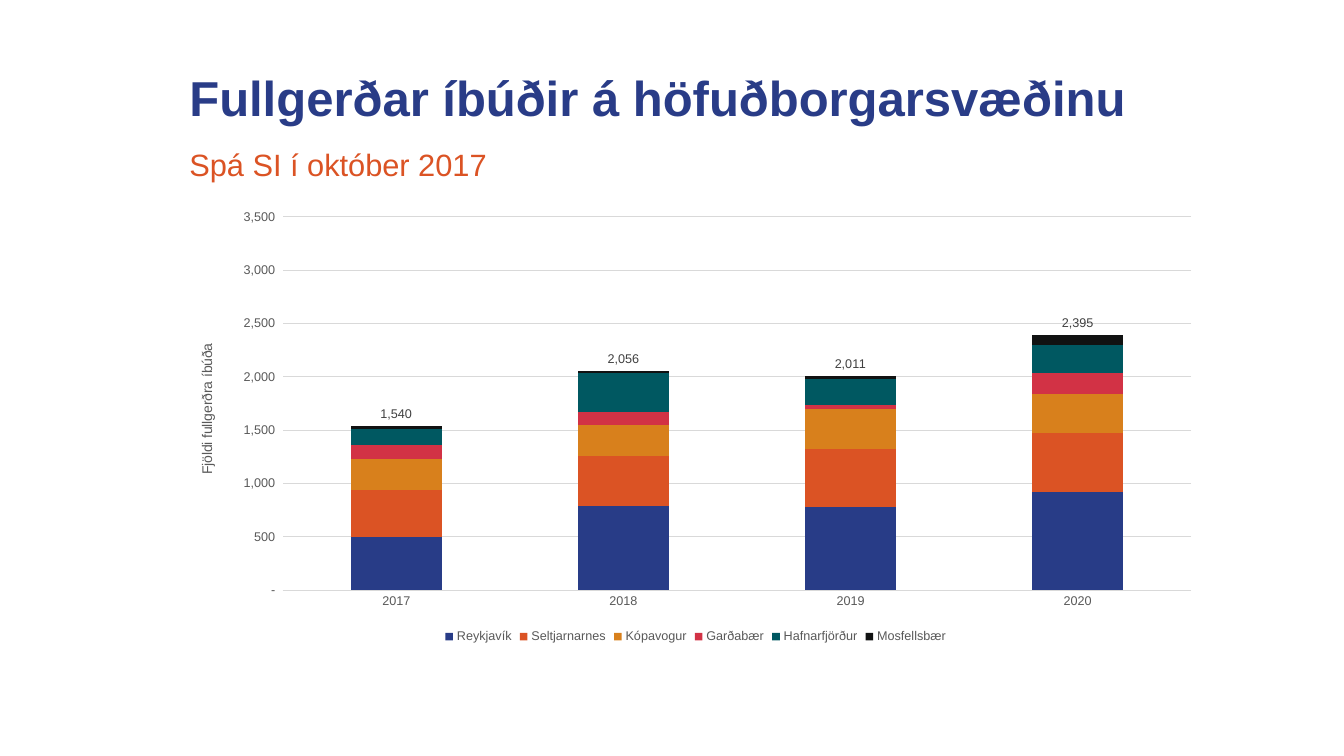
from dataclasses import dataclass

from lxml import etree
from pptx import Presentation
from pptx import util as u
from pptx.chart import data as chart_data
from pptx.dml import color
from pptx.enum import chart as ch
from pptx.enum import text
from pptx.oxml import ns, parse_xml

YEARS = ["2017", "2018", "2019", "2020"]
TOTALS = [1540, 2056, 2011, 2395]
TOWNS = {
    "Reykjavík": ([500, 790, 780, 920], "283C87"),
    "Seltjarnarnes": ([440, 470, 540, 550], "DB5324"),
    "Kópavogur": ([290, 290, 380, 370], "D8801C"),
    "Garðabær": ([130, 120, 40, 200], "D23245"),
    "Hafnarfjörður": ([150, 370, 240, 260], "005861"),
    "Mosfellsbær": ([30, 20, 30, 90], "111212"),
}
PLOT_AREA = {"x": 0.1, "y": 0.03, "w": 0.88, "h": 0.84}


@dataclass(frozen=True)
class Theme:
    """Colours, font and type sizes of the slide."""
    font: str = "Arial"
    heading: str = "293C87"
    accent: str = "DB5324"
    muted: str = "595959"
    label: str = "404040"
    grid: str = "D9D9D9"
    heading_size: int = 35
    subheading_size: int = 22
    axis_title_size: int = 10
    small_size: int = 9


class Deck:
    """Holds the theme and the current slide, and adds elements to it."""

    def __init__(self, theme):
        self.theme = theme
        self.prs = Presentation()
        self.prs.slide_width = u.Inches(13.33)
        self.prs.slide_height = u.Inches(7.5)
        self.slide = self.prs.slides.add_slide(self.prs.slide_layouts[6])

    def style(self, font, size, rgb, bold=False):
        """Apply the theme font with a size and colour."""
        values = {"name": self.theme.font, "size": u.Pt(size), "bold": bold}
        for key, value in values.items():
            setattr(font, key, value)
        font.color.rgb = color.RGBColor.from_string(rgb)

    def line(self, line):
        """Draw a thin grid-coloured line."""
        line.width = u.Pt(0.75)
        line.color.rgb = color.RGBColor.from_string(self.theme.grid)

    def text(self, wording, box, size, rgb, anchor, bold=False):
        """Add one line of text in a box."""
        frame = self.slide.shapes.add_textbox(*map(u.Inches, box)).text_frame
        frame.word_wrap = True
        frame.vertical_anchor = anchor
        paragraph = frame.paragraphs[0]
        paragraph.line_spacing = 0.9
        run = paragraph.add_run()
        run.text = wording
        self.style(run.font, size, rgb, bold)

    def stacked_chart(self, box, axis_title):
        """Add the stacked columns with their totals above."""
        theme = self.theme
        figures = chart_data.CategoryChartData(number_format="#,##0")
        figures.categories = YEARS
        for town, (homes, _) in TOWNS.items():
            figures.add_series(town, homes)
        figures.add_series("Series 7", TOTALS)
        chart = self.slide.shapes.add_chart(
            ch.XL_CHART_TYPE.COLUMN_STACKED, *map(u.Inches, box), figures).chart
        self.style(chart.font, theme.axis_title_size, theme.muted)
        chart.has_title = False
        self.axes(chart, axis_title)
        self.totals_line(chart)
        columns = chart.plots[0]
        for key, value in {"gap_width": 150, "overlap": 100,
                           "vary_by_categories": False}.items():
            setattr(columns, key, value)
        for series, (_, rgb) in zip(columns.series, TOWNS.values()):
            series.format.fill.solid()
            series.format.fill.fore_color.rgb = color.RGBColor.from_string(rgb)
        self.legend(chart)
        self.plot_layout(chart)

    def axes(self, chart, axis_title):
        """Format both axes and the gridlines."""
        theme = self.theme
        for axis in (chart.category_axis, chart.value_axis):
            axis.major_tick_mark = ch.XL_TICK_MARK.NONE
            axis.minor_tick_mark = ch.XL_TICK_MARK.NONE
            self.style(axis.tick_labels.font, theme.small_size, theme.muted)
        self.line(chart.category_axis.format.line)
        homes = chart.value_axis
        for key, value in {"minimum_scale": 0, "maximum_scale": 3500,
                           "major_unit": 500, "has_major_gridlines": True}.items():
            setattr(homes, key, value)
        self.line(homes.major_gridlines.format.line)
        homes.format.line.fill.background()
        homes.tick_labels.number_format = r'_(* #,##0_);_(* \(#,##0\);_(* "-"_);_(@_)'
        homes.tick_labels.number_format_is_linked = False
        title = homes.axis_title.text_frame
        title.text = axis_title
        self.style(title.paragraphs[0].runs[0].font, theme.axis_title_size, theme.muted)

    def totals_line(self, chart):
        """Turn the last series into an unseen line that carries the totals."""
        columns = chart.plots[0]._element
        totals = columns.findall(ns.qn("c:ser"))[-1]
        for flag in totals.findall(ns.qn("c:invertIfNegative")):
            totals.remove(flag)
        line = parse_xml(f'<c:lineChart {ns.nsdecls("c")}>'
                         '<c:grouping val="standard"/><c:varyColors val="0"/>'
                         '<c:marker val="1"/></c:lineChart>')
        line.insert(2, totals)
        for axis_id in columns.findall(ns.qn("c:axId")):
            etree.SubElement(line, ns.qn("c:axId"), val=axis_id.get("val"))
        columns.addnext(line)
        series = chart.plots[1].series[0]
        series.smooth = False
        series.marker.style = ch.XL_MARKER_STYLE.NONE
        series.format.line.fill.background()
        labels = series.data_labels
        for key, value in {"show_value": True, "number_format": "#,##0",
                           "number_format_is_linked": False,
                           "position": ch.XL_LABEL_POSITION.ABOVE}.items():
            setattr(labels, key, value)
        self.style(labels.font, self.theme.small_size, self.theme.label)

    def legend(self, chart):
        """Show the towns below the chart and leave the totals out."""
        chart.has_legend = True
        legend = chart.legend
        legend.position = ch.XL_LEGEND_POSITION.BOTTOM
        legend.include_in_layout = False
        self.style(legend.font, self.theme.small_size, self.theme.muted)
        legend._element.find(ns.qn("c:legendPos")).addnext(parse_xml(
            f'<c:legendEntry {ns.nsdecls("c")}><c:idx val="{len(TOWNS)}"/>'
            '<c:delete val="1"/></c:legendEntry>'))

    def plot_layout(self, chart):
        """Place the inner plot area."""
        area = chart._chartSpace.chart.plotArea
        for layout in area.findall(ns.qn("c:layout")):
            area.remove(layout)
        layout = etree.Element(ns.qn("c:layout"))
        manual = etree.SubElement(layout, ns.qn("c:manualLayout"))
        etree.SubElement(manual, ns.qn("c:layoutTarget"), val="inner")
        for side in "xy":
            etree.SubElement(manual, ns.qn(f"c:{side}Mode"), val="edge")
        for side, share in PLOT_AREA.items():
            etree.SubElement(manual, ns.qn(f"c:{side}"), val=str(share))
        area.insert(0, layout)


def main():
    """Build the slide and save it."""
    theme = Theme()
    deck = Deck(theme)
    left, width = 1.78, 10.24
    deck.text("Fullgerðar íbúðir á höfuðborgarsvæðinu", (left, 0.6, width, 0.71),
              theme.heading_size, theme.heading, text.MSO_ANCHOR.BOTTOM, bold=True)
    deck.stacked_chart((left, 2.02, width, 4.41), "Fjöldi fullgerðra íbúða")
    deck.text("Spá SI í október 2017", (left, 1.44, width, 0.39),
              theme.subheading_size, theme.accent, text.MSO_ANCHOR.TOP)
    deck.prs.save("out.pptx")


if __name__ == "__main__":
    main()
